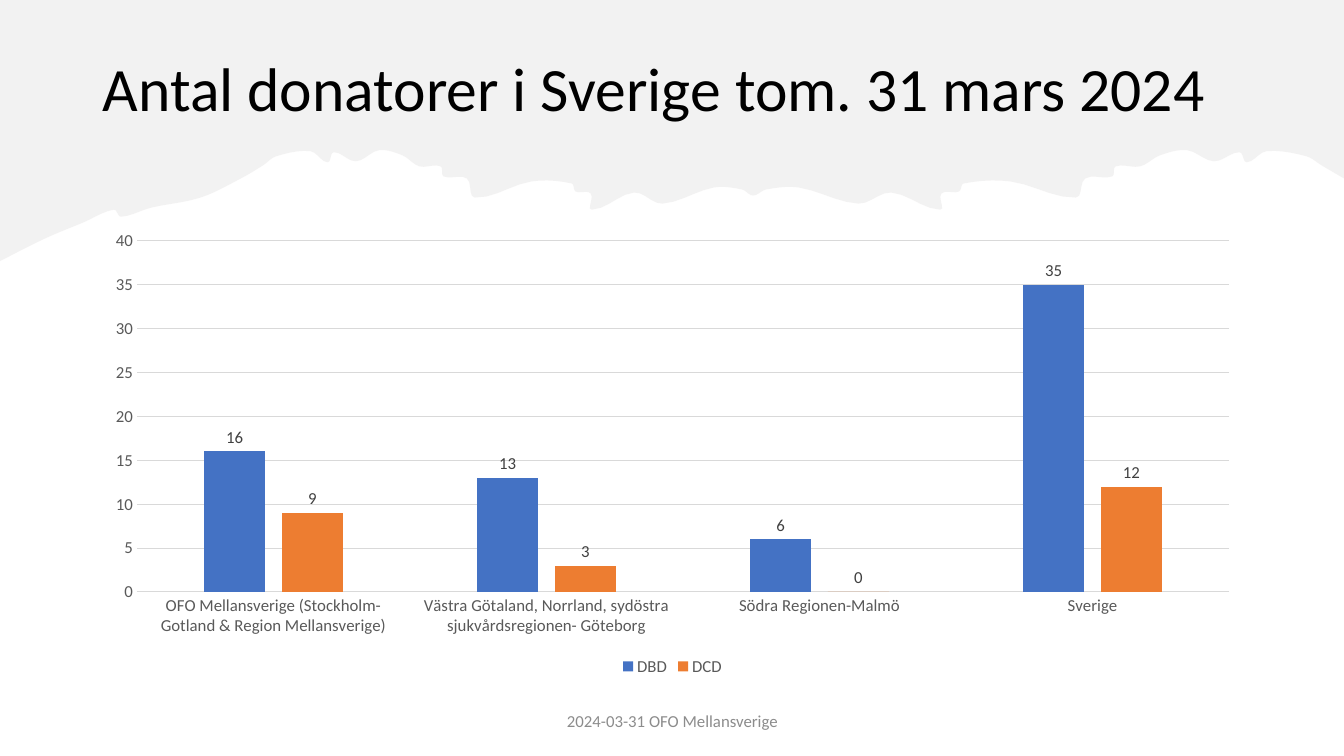
import dataclasses

import lxml.etree
import pptx
import pptx.chart.data
import pptx.dml.color
import pptx.enum.chart
import pptx.enum.text
import pptx.oxml.ns
import pptx.util

RGB = pptx.dml.color.RGBColor
Inches = pptx.util.Inches
Pt = pptx.util.Pt
Align = pptx.enum.text.PP_ALIGN

BLACK = RGB(0x00, 0x00, 0x00)
SLATE = RGB(0x40, 0x40, 0x40)
GRAY = RGB(0x59, 0x59, 0x59)
DIM = RGB(0x8C, 0x8C, 0x8C)
RULE = RGB(0xD9, 0xD9, 0xD9)
CLOUD = RGB(0xE7, 0xE6, 0xE6)
BLUE = RGB(0x44, 0x72, 0xC4)
ORANGE = RGB(0xED, 0x7D, 0x31)
FACE = "Calibri"
WIDTH, HEIGHT = 13.33, 7.5
STRETCH = 1.16
STEPS = 5


@dataclasses.dataclass
class Label:
    text: str
    left: float
    top: float
    width: float
    height: float
    size: int
    color: RGB
    align: Align
    lead: float = 1.0
    after: int = 0


@dataclasses.dataclass
class Group:
    name: str
    counts: tuple[int, ...]
    color: RGB


LABELS = [
    Label("Antal donatorer i Sverige tom. 31 mars 2024",
          0.92, 0.4, 11.5, 1.02, 44, BLACK, Align.LEFT, lead=0.9),
    Label("2024-03-31 OFO Mellansverige",
          4.42, 6.95, 4.5, 0.4, 12, DIM, Align.CENTER, after=6),
]

PLACES = [
    "OFO Mellansverige (Stockholm- Gotland & Region Mellansverige)",
    "Västra Götaland, Norrland, sydöstra sjukvårdsregionen- Göteborg",
    "Södra Regionen-Malmö",
    "Sverige",
]

GROUPS = [
    Group("DBD", (16, 13, 6, 35), BLUE),
    Group("DCD", (9, 3, 0, 12), ORANGE),
]

SLOPE = [(0, 2.59), (0.46, 2.36), (0.82, 2.21), (1.13, 2.08), (1.2, 2.15),
         (1.5, 2.06), (1.99, 1.96)]
RIDGE = [(2.39, 1.77), (2.61, 1.64), (2.74, 1.55), (3.08, 1.5), (3.25, 1.61),
         (3.31, 1.51), (3.53, 1.6), (3.76, 1.49), (3.99, 1.54), (4.16, 1.65),
         (4.37, 1.65), (4.4, 1.75), (4.63, 1.77), (4.71, 1.96), (5.27, 1.8),
         (5.67, 1.82), (5.71, 1.9), (5.86, 1.92), (5.87, 2.08), (6.29, 1.91),
         (6.57, 2.02), (7.08, 1.86), (7.36, 1.88), (7.47, 1.94)]


def mirror(ridge: list[tuple]) -> list[tuple]:
    hub = ridge[-1][0]
    return [(min(hub + STRETCH * (hub - x), WIDTH), y) for x, y in ridge[-2::-1]]


def smooth(spots: list[tuple]) -> list[complex]:
    knots = [complex(x, y) for x, y in spots]
    ways = []
    for back, ahead in zip(knots[:1] + knots, knots[1:] + knots[-1:]):
        ways.append((ahead - back) / abs(ahead - back))
    curve = knots[:1]
    for a, b, leave, reach in zip(knots, knots[1:], ways, ways[1:]):
        grip = abs(b - a) / 3
        c, d = a + grip * leave, b - grip * reach
        for step in range(1, STEPS + 1):
            t = step / STEPS
            u = 1 - t
            curve.append(u ** 3 * a + 3 * u * u * t * c + 3 * u * t * t * d + t ** 3 * b)
    return curve


def draw_cloud(shapes: pptx.shapes.shapetree.SlideShapes) -> None:
    curve = smooth(SLOPE + RIDGE + mirror(RIDGE)) + [complex(WIDTH, 0), 0j]
    first, *rest = [(Inches(spot.real), Inches(spot.imag)) for spot in curve]
    pen = shapes.build_freeform(*first)
    pen.add_line_segments(rest)
    cloud = pen.convert_to_shape()
    cloud.shadow.inherit = False
    cloud.line.fill.background()
    cloud.fill.solid()
    cloud.fill.fore_color.rgb = CLOUD
    tint = cloud.element.xpath(".//a:srgbClr")[0]
    lxml.etree.SubElement(tint, pptx.oxml.ns.qn("a:alpha"), val="50000")


def style(font: pptx.text.text.Font, size: int, color: RGB) -> None:
    font.name = FACE
    font.size = Pt(size)
    font.color.rgb = color


def draw_label(shapes: pptx.shapes.shapetree.SlideShapes, label: Label) -> None:
    box = shapes.add_textbox(Inches(label.left), Inches(label.top),
                             Inches(label.width), Inches(label.height))
    frame = box.text_frame
    frame.word_wrap = True
    frame.vertical_anchor = pptx.enum.text.MSO_ANCHOR.MIDDLE
    frame.text = label.text
    line = frame.paragraphs[0]
    line.alignment = label.align
    line.line_spacing = label.lead
    line.space_after = Pt(label.after)
    style(line.runs[0].font, label.size, label.color)


def draw_chart(shapes: pptx.shapes.shapetree.SlideShapes) -> None:
    kinds = pptx.enum.chart
    data = pptx.chart.data.CategoryChartData()
    data.categories = PLACES
    for group in GROUPS:
        data.add_series(group.name, group.counts)
    chart = shapes.add_chart(kinds.XL_CHART_TYPE.COLUMN_CLUSTERED, Inches(0.92),
                             Inches(2.2), Inches(11.5), Inches(4.55), data).chart
    style(chart.font, 10, BLACK)
    chart.has_title = False
    chart.has_legend = True
    chart.legend.position = kinds.XL_LEGEND_POSITION.BOTTOM
    chart.legend.include_in_layout = False
    style(chart.legend.font, 12, GRAY)

    places, counts = chart.category_axis, chart.value_axis
    for axis in (places, counts):
        axis.major_tick_mark = axis.minor_tick_mark = kinds.XL_TICK_MARK.NONE
        style(axis.tick_labels.font, 12, GRAY)
    counts.minimum_scale, counts.maximum_scale, counts.major_unit = 0, 40, 5
    counts.format.line.fill.background()
    for line in (places.format.line, counts.major_gridlines.format.line):
        line.color.rgb = RULE
        line.width = Pt(0.75)

    plot = chart.plots[0]
    plot.vary_by_categories = False
    plot.gap_width, plot.overlap = 219, -27
    for group, bars in zip(GROUPS, plot.series):
        bars.format.fill.solid()
        bars.format.fill.fore_color.rgb = group.color
        bars.format.line.fill.background()
        bars.invert_if_negative = False
        tags = bars.data_labels
        tags.show_value = True
        tags.position = kinds.XL_LABEL_POSITION.OUTSIDE_END
        style(tags.font, 12, SLATE)


def main() -> None:
    deck = pptx.Presentation()
    deck.slide_width, deck.slide_height = Inches(WIDTH), Inches(HEIGHT)
    shapes = deck.slides.add_slide(deck.slide_layouts[6]).shapes
    draw_cloud(shapes)
    for label in LABELS:
        draw_label(shapes, label)
    draw_chart(shapes)
    deck.save("out.pptx")


if __name__ == "__main__":
    main()
